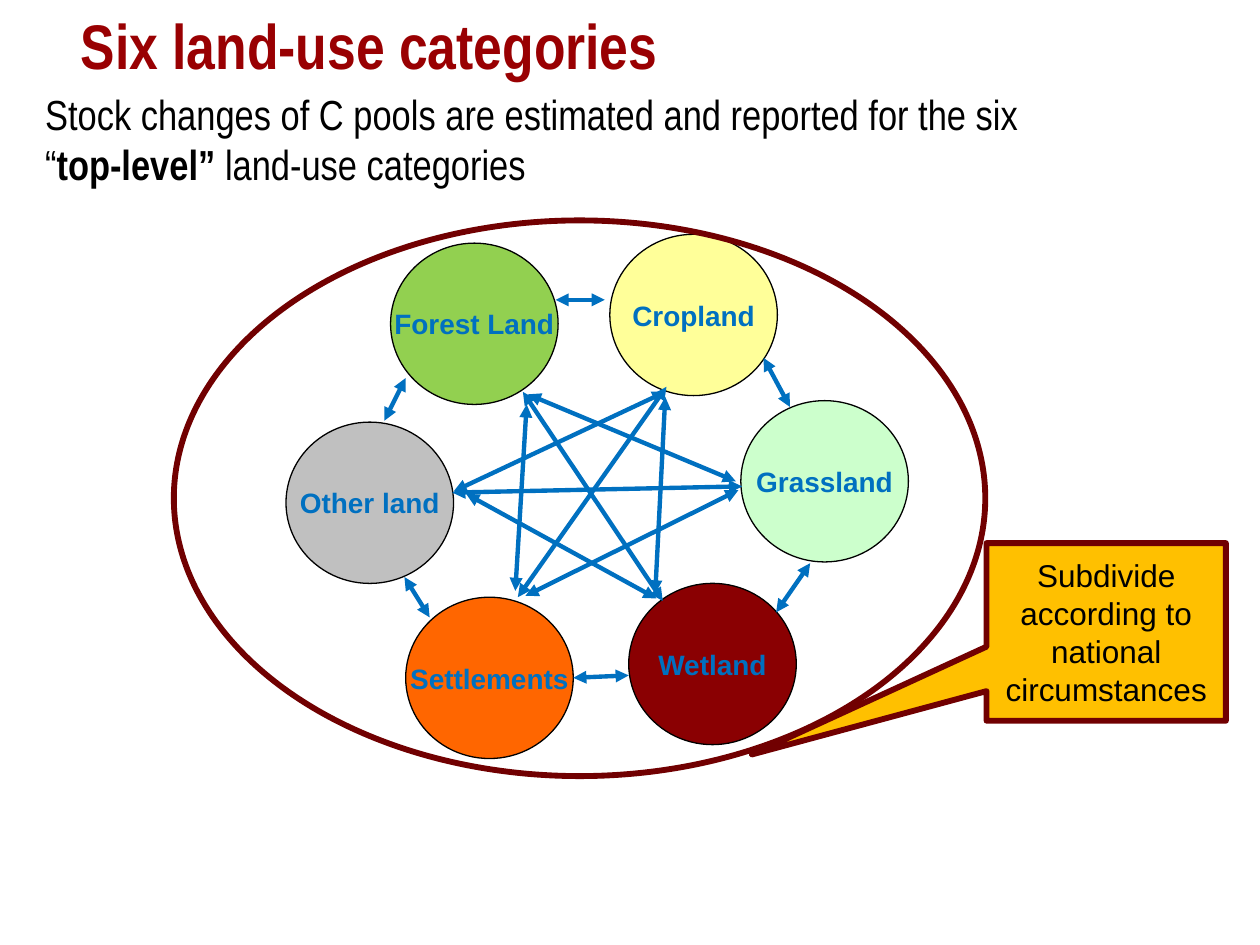
import pptx
import pptx.util
import pptx.dml.color
import pptx.enum.shapes
import pptx.enum.text
import pptx.oxml.ns
from lxml import etree

WIDTH, HEIGHT = pptx.util.Inches(10), pptx.util.Inches(7.5)
SHAPE = pptx.enum.shapes.MSO_SHAPE
ALIGN = pptx.enum.text.PP_ALIGN
MIDDLE = pptx.enum.text.MSO_ANCHOR.MIDDLE
BLUE, MAROON = "0070C0", "710001"
CIRCLE = (13.3, 17.07)

CATEGORIES = [
    ("Other land", 22.7, 44.67, "C0C0C0"),
    ("Forest Land", 31, 25.73, "92D050"),
    ("Settlements", 32.2, 63.2, "FF6600"),
    ("Wetland", 49.9, 61.73, "8A0002"),
    ("Cropland", 48.4, 24.8, "FFFF99"),
    ("Grassland", 58.8, 42.4, "CCFFCC"),
]
CROSS_ARROWS = [
    (41.5, 41.47, 52.6, 63.6),
    (35.9, 52.13, 58.9, 51.47),
    (41.1, 63.2, 52.9, 40.93),
    (36, 52, 52.8, 41.47),
    (37, 52.27, 52.1, 63.33),
    (52, 62.8, 52.8, 42),
    (40.9, 62.53, 41.8, 42.8),
    (41.9, 41.73, 58.4, 50.93),
    (41.7, 63.07, 58.6, 51.87),
]
RING_ARROWS = [
    (30.5, 44.53, 32.2, 40),
    (44.1, 31.73, 48, 31.73),
    (60.6, 37.87, 62.7, 43.07),
    (32.1, 61.07, 34.1, 65.33),
    (45.5, 71.73, 49.9, 71.47),
    (61.6, 64.8, 64.3, 59.6),
]


def rgb(value):
    """Return the colour for a hex string."""
    return pptx.dml.color.RGBColor.from_string(value)


def share(x, y, *rest):
    """Turn x, y pairs in percent of the slide into lengths."""
    return [int(v * (HEIGHT if i % 2 else WIDTH) / 100)
            for i, v in enumerate((x, y, *rest))]


def set_font(p, name, size, color, bold=None):
    """Format a whole paragraph."""
    font = p.font
    font.name, font.size, font.bold = name, pptx.util.Pt(size), bold
    font.color.rgb = rgb(color)


def add_title(s, text):
    """Fill and place the title placeholder."""
    title = s.shapes.title
    title.left, title.top, title.width, title.height = share(5.4, 0, 89.9, 9.33)
    tf = title.text_frame
    tf.text = text
    tf.vertical_anchor = MIDDLE
    p = tf.paragraphs[0]
    p.alignment = ALIGN.LEFT
    set_font(p, "Arial Narrow", 36, "990002", True)


def add_intro(s, parts):
    """Add the opening sentence from (text, bold) parts."""
    tf = s.shapes.add_textbox(*share(2.6, 8.67, 85.9, 12.13)).text_frame
    tf.word_wrap = True
    p = tf.paragraphs[0]
    for text, bold in parts:
        r = p.add_run()
        r.text = text
        r.font.bold = bold
    set_font(p, "Arial Narrow", 24, "000000")


def add_box(s, kind, box, fill, line, width):
    """Add an outlined preset shape, unfilled when fill is None."""
    sp = s.shapes.add_shape(kind, *share(*box))
    sp.shadow.inherit = False
    if fill:
        sp.fill.solid()
        sp.fill.fore_color.rgb = rgb(fill)
    else:
        sp.fill.background()
    sp.line.color.rgb = rgb(line)
    sp.line.width = pptx.util.Pt(width)
    return sp


def add_label(sp, text, size, color, bold=False, wrap=True):
    """Write centred text in a shape."""
    tf = sp.text_frame
    tf.text = text
    tf.word_wrap = wrap
    tf.vertical_anchor = MIDDLE
    p = tf.paragraphs[0]
    p.alignment = ALIGN.CENTER
    set_font(p, "Arial", size, color, bold)


def add_arrow(s, ends):
    """Add a double-headed arrow."""
    straight = pptx.enum.shapes.MSO_CONNECTOR.STRAIGHT
    sp = s.shapes.add_connector(straight, *share(*ends))
    sp.line.color.rgb = rgb(BLUE)
    sp.line.width = pptx.util.Pt(2.5)
    qn = pptx.oxml.ns.qn
    ln = sp.line._get_or_add_ln()
    for tag in ("a:headEnd", "a:tailEnd"):
        etree.SubElement(ln, qn(tag), type="triangle")
    etree.SubElement(ln.getparent(), qn("a:effectLst"))


def main():
    """Build and save the slide."""
    prs = pptx.Presentation()
    prs.slide_width, prs.slide_height = WIDTH, HEIGHT
    s = prs.slides.add_slide(prs.slide_layouts[5])
    add_title(s, "Six land-use categories")
    for name, x, y, fill in CATEGORIES:
        sp = add_box(s, SHAPE.OVAL, (x, y, *CIRCLE), fill, "000000", 0.75)
        add_label(sp, name, 16, BLUE, bold=True, wrap=False)
    for ends in CROSS_ARROWS + RING_ARROWS:
        add_arrow(s, ends)
    add_intro(s, [
        ("Stock changes of C pools are estimated and reported for the six “", False),
        ("top-level”", True),
        (" land-use categories", False),
    ])
    add_box(s, SHAPE.OVAL, (13.8, 23.33, 64.4, 58.8), None, MAROON, 3.35)
    callout = add_box(s, SHAPE.RECTANGULAR_CALLOUT, (78.3, 57.47, 19, 18.8),
                      "FFC000", MAROON, 3.35)
    callout.adjustments[0], callout.adjustments[1] = -1.48, 0.69
    add_label(callout, "Subdivide according to national circumstances", 18, "000000")
    prs.save("out.pptx")


if __name__ == "__main__":
    main()
